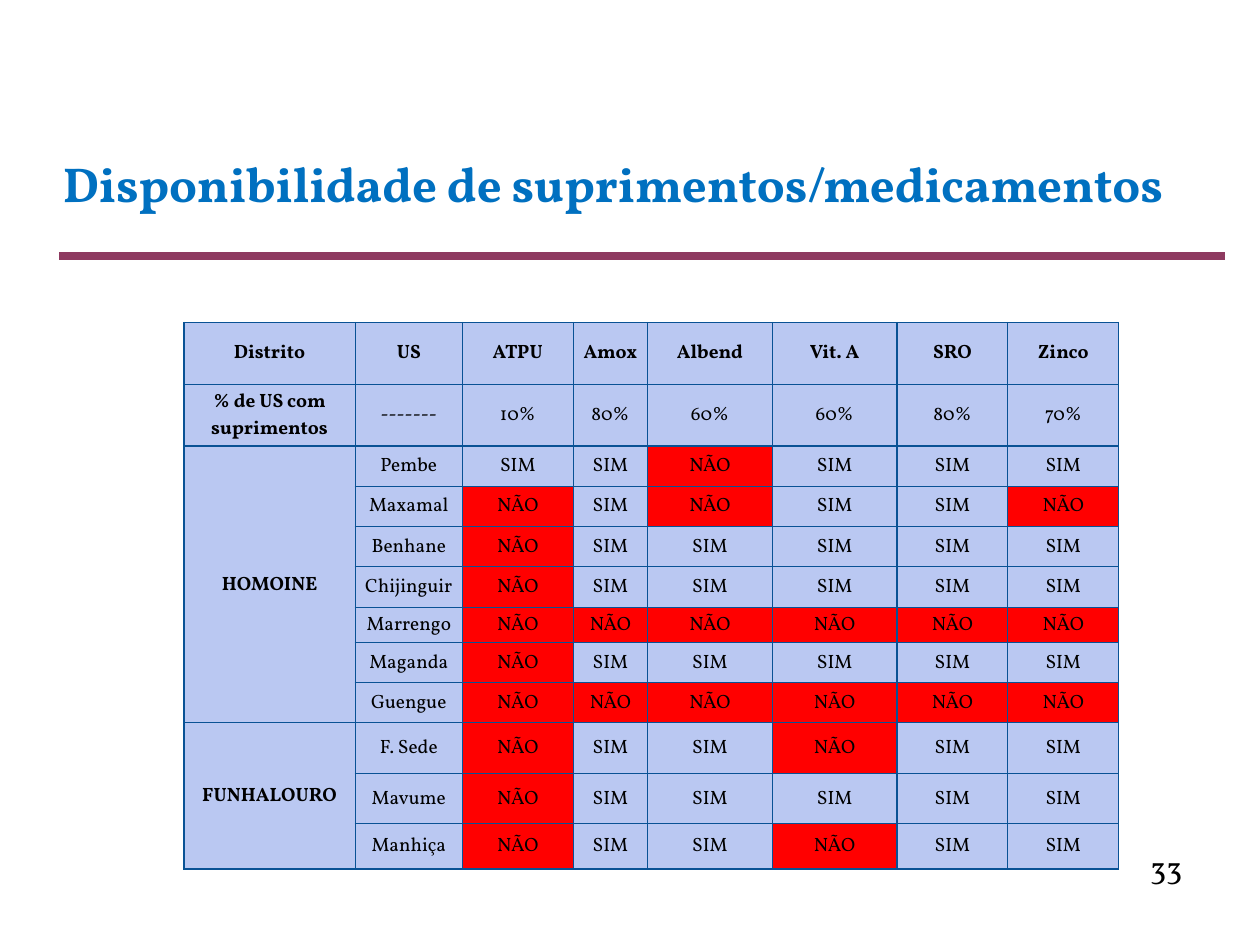
from lxml.etree import SubElement
from pptx import Presentation
from pptx.dml.color import RGBColor
from pptx.enum.shapes import MSO_CONNECTOR
from pptx.enum.text import MSO_ANCHOR, PP_ALIGN
from pptx.oxml.ns import qn
from pptx.util import Inches, Pt

FONT = "Vollkorn"
BLACK = RGBColor(0x00, 0x00, 0x00)
TITLE_BLUE = RGBColor(0x00, 0x70, 0xC0)
RULE_PLUM = RGBColor(0x8E, 0x3A, 0x60)
BORDER_BLUE = RGBColor(0x09, 0x52, 0x95)
CELL_BLUE = RGBColor(0xBA, 0xC8, 0xF2)
MISSING_RED = RGBColor(0xFF, 0x00, 0x00)

COLUMN_WIDTHS = [1.36, 0.85, 0.88, 0.59, 0.99, 0.99, 0.88, 0.88]
ROW_HEIGHTS = [0.49] * 2 + [0.32] * 4 + [0.28] + [0.32] * 2 + [0.4] * 2 + [0.36]
HEADINGS = ["Distrito", "US", "ATPU", "Amox", "Albend", "Vit. A", "SRO", "Zinco"]
SHARES = ["% de US com suprimentos", "-------", "10%", "80%", "60%", "60%", "80%", "70%"]
ANSWERS = {"S": "SIM", "N": "NÃO"}
DISTRICTS = {
    "HOMOINE": {
        "Pembe": "SSNSSS",
        "Maxamal": "NSNSSN",
        "Benhane": "NSSSSS",
        "Chijinguir": "NSSSSS",
        "Marrengo": "NNNNNN",
        "Maganda": "NSSSSS",
        "Guengue": "NNNNNN",
    },
    "FUNHALOURO": {
        "F. Sede": "NSSNSS",
        "Mavume": "NSSSSS",
        "Manhiça": "NSSNSS",
    },
}


def format_text(frame, size, color, bold=False):
    """Apply one font style to every run of a text frame."""
    for paragraph in frame.paragraphs:
        for span in paragraph.runs:
            span.font.name = FONT
            span.font.size = Pt(size)
            span.font.bold = bold
            span.font.color.rgb = color


def add_text(page, text, left, top, width, height, size, color, bold=False):
    """Add a text box and return its text frame."""
    box = page.shapes.add_textbox(Inches(left), Inches(top), Inches(width), Inches(height))
    frame = box.text_frame
    frame.word_wrap = True
    frame.text = text
    format_text(frame, size, color, bold)
    return frame


def add_title(page):
    """Add the slide title."""
    frame = add_text(page, "Disponibilidade de suprimentos/medicamentos",
                     0.5, 0.99, 9, 0.87, 28, TITLE_BLUE, True)
    frame.margin_left = frame.margin_right = frame.margin_bottom = 0
    frame.vertical_anchor = MSO_ANCHOR.MIDDLE


def add_rule(page):
    """Add the thick line below the title."""
    rule = page.shapes.add_connector(MSO_CONNECTOR.STRAIGHT, Inches(0.47), Inches(2.03),
                                     Inches(9.72), Inches(2.03))
    rule.line.color.rgb = RULE_PLUM
    rule.line.width = Pt(4.5)
    SubElement(rule._element.spPr, qn("a:effectLst"))


def set_borders(cell):
    """Draw a thin border on all four sides of a cell."""
    properties = cell._tc.get_or_add_tcPr()
    for side in ("a:lnL", "a:lnR", "a:lnT", "a:lnB"):
        line = SubElement(properties, qn(side), w=str(Pt(0.75)))
        fill = SubElement(line, qn("a:solidFill"))
        SubElement(fill, qn("a:srgbClr"), val=str(BORDER_BLUE))


def format_cell(cell, bold):
    """Set borders, fill, margins and text style of a cell."""
    set_borders(cell)
    cell.fill.solid()
    cell.fill.fore_color.rgb = MISSING_RED if cell.text == ANSWERS["N"] else CELL_BLUE
    cell.margin_left = cell.margin_right = cell.margin_top = Inches(0.01)
    cell.margin_bottom = 0
    cell.vertical_anchor = MSO_ANCHOR.MIDDLE
    cell.text_frame.paragraphs[0].alignment = PP_ALIGN.CENTER
    format_text(cell.text_frame, 11, BLACK, bold)


def table_rows():
    """List the table's texts row by row, naming each district once."""
    rows = [HEADINGS, SHARES]
    for district, units in DISTRICTS.items():
        for index, (unit, answers) in enumerate(units.items()):
            name = district if index == 0 else ""
            rows.append([name, unit] + [ANSWERS[answer] for answer in answers])
    return rows


def add_supply_table(page):
    """Add the table of supplies by health unit."""
    table = page.shapes.add_table(
        len(ROW_HEIGHTS), len(COLUMN_WIDTHS), Inches(1.46), Inches(2.56),
        Inches(sum(COLUMN_WIDTHS)), Inches(sum(ROW_HEIGHTS))).table
    for column, width in zip(table.columns, COLUMN_WIDTHS):
        column.width = Inches(width)
    for row, height in zip(table.rows, ROW_HEIGHTS):
        row.height = Inches(height)
    for row_index, texts in enumerate(table_rows()):
        for column_index, text in enumerate(texts):
            cell = table.cell(row_index, column_index)
            cell.text = text
            format_cell(cell, bold=row_index == 0 or column_index == 0)
    first = 2
    for units in DISTRICTS.values():
        last = first + len(units) - 1
        table.cell(first, 0).merge(table.cell(last, 0))
        first = last + 1


def main():
    """Build the slide and save the deck."""
    deck = Presentation()
    deck.slide_width, deck.slide_height = Inches(10), Inches(7.5)
    page = deck.slides.add_slide(deck.slide_layouts[6])
    add_rule(page)
    add_text(page, "33", 9.03, 6.68, 0.47, 0.4, 18, BLACK)
    add_supply_table(page)
    add_title(page)
    deck.save("out.pptx")


if __name__ == "__main__":
    main()
